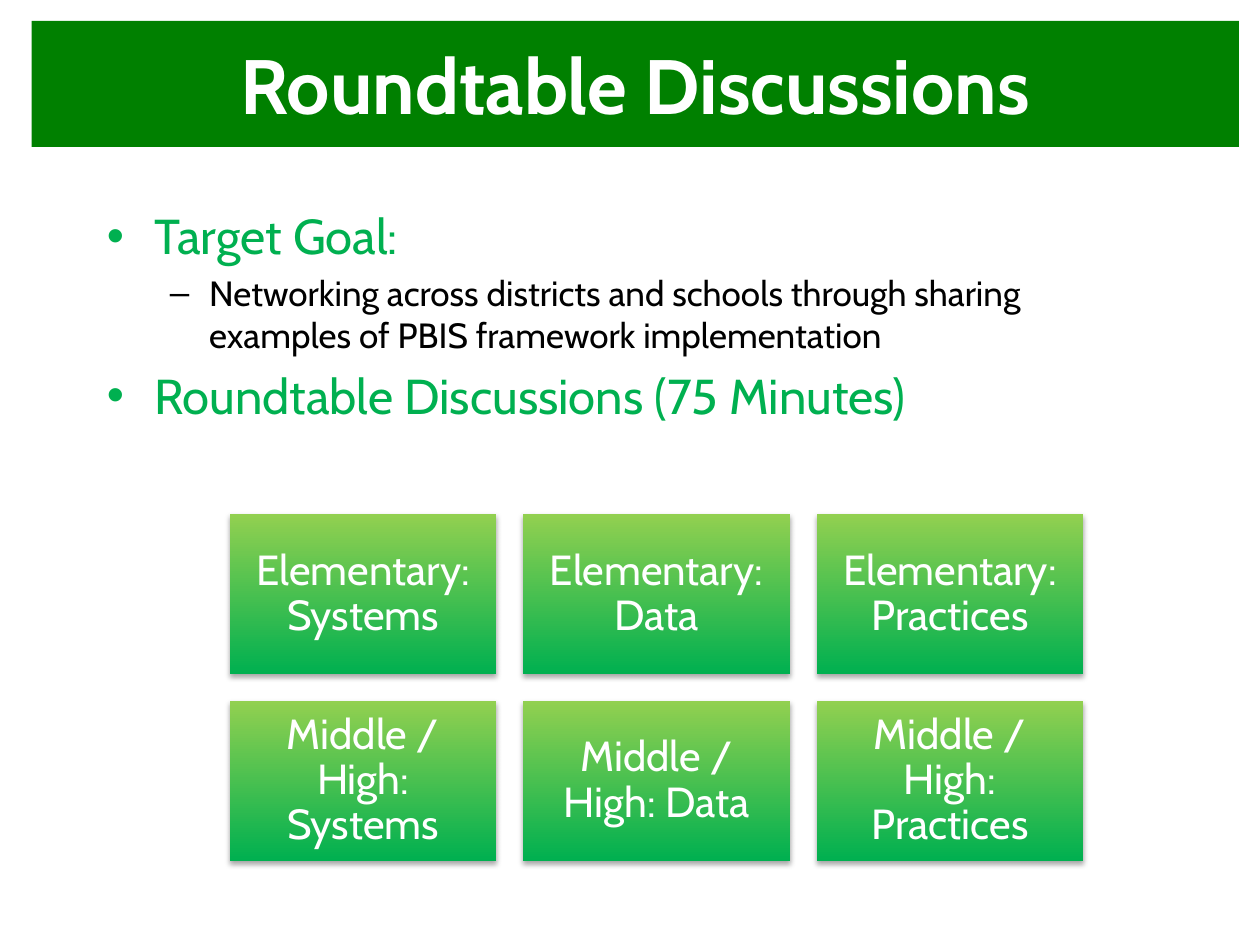
from lxml import etree
from pptx import Presentation
from pptx.dml.color import RGBColor
from pptx.enum.shapes import MSO_SHAPE
from pptx.enum.text import MSO_ANCHOR, PP_ALIGN
from pptx.oxml import parse_xml
from pptx.oxml.ns import nsdecls, qn
from pptx.util import Pt

RECT = MSO_SHAPE.RECTANGLE
MIDDLE = MSO_ANCHOR.MIDDLE
CENTER = PP_ALIGN.CENTER
FONT = "Cabin"
COLORS = {
    "banner": "008000",
    "green": "00B050",
    "lime": "92D050",
    "white": "FFFFFF",
    "black": "000000",
}


def rgb(name):
    return RGBColor.from_string(COLORS[name])


def style(para, size, color, bold=False):
    for run in para.runs:
        font = run.font
        font.name, font.size, font.bold = FONT, Pt(size), bold
        font.color.rgb = rgb(color)


deck = Presentation()
deck.slide_width, deck.slide_height = Pt(720), Pt(540)
slide = deck.slides.add_slide(deck.slide_layouts[5])

# Title banner
title = slide.shapes.title
title.left, title.top, title.width, title.height = Pt(18), Pt(12), Pt(690), Pt(72)
title.fill.solid()
title.fill.fore_color.rgb = rgb("banner")
frame = title.text_frame
frame.text = "Roundtable Discussions"
frame.vertical_anchor = MIDDLE
frame.paragraphs[0].alignment = CENTER
style(frame.paragraphs[0], 44, "white", True)

# Goals: text, level, bullet, margin, hanging indent, size, colour
goals = [
    ("Target Goal:", 0, "•", 27, 27, 28, "green"),
    ("Networking across districts and schools through sharing "
     "examples of PBIS framework implementation", 1, "–", 58.5, 22.5, 20, "black"),
    ("Roundtable Discussions (75 Minutes)", 0, "•", 27, 27, 28, "green"),
]
box = slide.shapes.add_textbox(Pt(54), Pt(114), Pt(612), Pt(150))
frame = box.text_frame
frame.word_wrap = True
for i, (text, level, mark, margin, hang, size, color) in enumerate(goals):
    para = frame.add_paragraph() if i else frame.paragraphs[0]
    para.text = text
    para.level = level
    if i:
        para.space_before = Pt(size * 0.2)
    props = para._p.get_or_add_pPr()
    props.set("marL", str(Pt(margin)))
    props.set("indent", str(-Pt(hang)))
    etree.SubElement(props, qn("a:buFont")).set("typeface", "Arial")
    etree.SubElement(props, qn("a:buChar")).set("char", mark)
    style(para, size, color)

# Grid of discussion tables
left, top, wide, high, gap = 131.3, 293.8, 152.4, 91.4, 15.3
for row, school in enumerate(["Elementary:", "Middle / High:"]):
    for col, topic in enumerate(["Systems", "Data", "Practices"]):
        card = slide.shapes.add_shape(
            RECT, Pt(left + col * (wide + gap)), Pt(top + row * (high + gap)),
            Pt(wide), Pt(high))
        card.fill.gradient()
        card.fill.gradient_angle = 90
        for stop, color in zip(card.fill.gradient_stops, ["green", "lime"]):
            stop.color.rgb = rgb(color)
        card.line.fill.background()

        # Soft shadow below the card
        card.shadow.inherit = False
        card._element.spPr.find(qn("a:effectLst")).append(parse_xml(
            f'<a:outerShdw {nsdecls("a")} blurRad="{Pt(3.1)}" dist="{Pt(1.8)}" '
            f'dir="5400000" rotWithShape="0"><a:srgbClr val="{COLORS["black"]}">'
            '<a:alpha val="35000"/></a:srgbClr></a:outerShdw>'))

        frame = card.text_frame
        frame.text = f"{school} {topic}"
        frame.word_wrap = True
        frame.vertical_anchor = MIDDLE
        frame.margin_left = frame.margin_right = Pt(7.2)
        frame.margin_top = frame.margin_bottom = Pt(7.2)
        para = frame.paragraphs[0]
        para.alignment = CENTER
        para.line_spacing = 0.9
        style(para, 24, "white")

deck.save("out.pptx")
